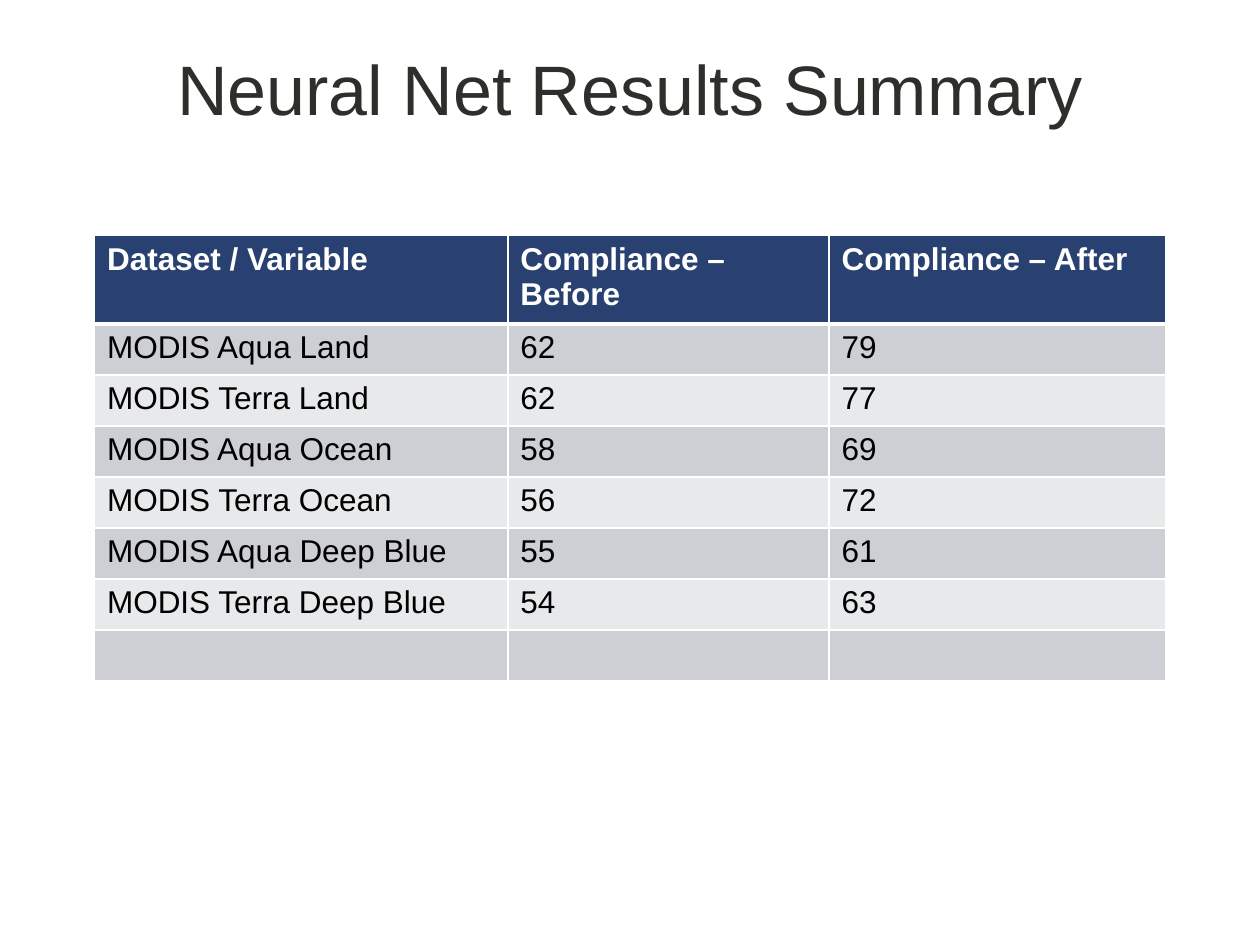
from lxml.etree import SubElement as Sub
from pptx import Presentation
from pptx.dml.color import RGBColor as Rgb
from pptx.enum.text import MSO_ANCHOR as Anchor, PP_ALIGN as Align
from pptx.oxml.ns import qn
from pptx.util import Inches, Pt

HUES = {"title": "2D2F2B", "head": "294171", "odd": "CDCFD5",
        "even": "E8E9EB", "white": "FFFFFF", "black": "000000"}
ROWS = [
    ("Dataset / Variable", "Compliance – Before", "Compliance – After"),
    ("MODIS Aqua Land", "62", "79"),
    ("MODIS Terra Land", "62", "77"),
    ("MODIS Aqua Ocean", "58", "69"),
    ("MODIS Terra Ocean", "56", "72"),
    ("MODIS Aqua Deep Blue", "55", "61"),
    ("MODIS Terra Deep Blue", "54", "63"),
    ("", "", ""),
]
WIDTHS = [3.28, 2.55, 2.67]


def add_run(para, text, size, hue, bold=False):
    run = para.add_run()
    run.text = text
    run.font.name = "Arial"
    run.font.size = Pt(size)
    run.font.bold = bold
    run.font.color.rgb = Rgb.from_string(HUES[hue])


def add_edge(cell, side, width):
    line = Sub(cell._tc.get_or_add_tcPr(), qn(f"a:ln{side}"), w=str(Pt(width)))
    fill = Sub(line, qn("a:solidFill"))
    Sub(fill, qn("a:srgbClr"), val=HUES["white"])


deck = Presentation()
deck.slide_width, deck.slide_height = Inches(10), Inches(7.5)
slide = deck.slides.add_slide(deck.slide_layouts[6])

title = slide.shapes.add_textbox(Inches(0.75), Inches(0.07), Inches(8.5), Inches(1.25))
frame = title.text_frame
frame.word_wrap = True
frame.vertical_anchor = Anchor.MIDDLE
para = frame.paragraphs[0]
para.alignment = Align.CENTER
add_run(para, "Neural Net Results Summary", 40, "title")

table = slide.shapes.add_table(len(ROWS), len(WIDTHS), Inches(0.75), Inches(1.87),
                               Inches(8.5), Inches(3.24)).table
for col, width in zip(table.columns, WIDTHS):
    col.width = Inches(width)

for r, row in enumerate(ROWS):
    head = r == 0
    band = "head" if head else "odd" if r % 2 else "even"
    for c, text in enumerate(row):
        cell = table.cell(r, c)
        for side in "LRTB":
            thick = (head and side == "B") or (r == 1 and side == "T")
            add_edge(cell, side, 3 if thick else 1)
        cell.fill.solid()
        cell.fill.fore_color.rgb = Rgb.from_string(HUES[band])
        if text:
            add_run(cell.text_frame.paragraphs[0], text, 18,
                    "white" if head else "black", head)

deck.save("out.pptx")
